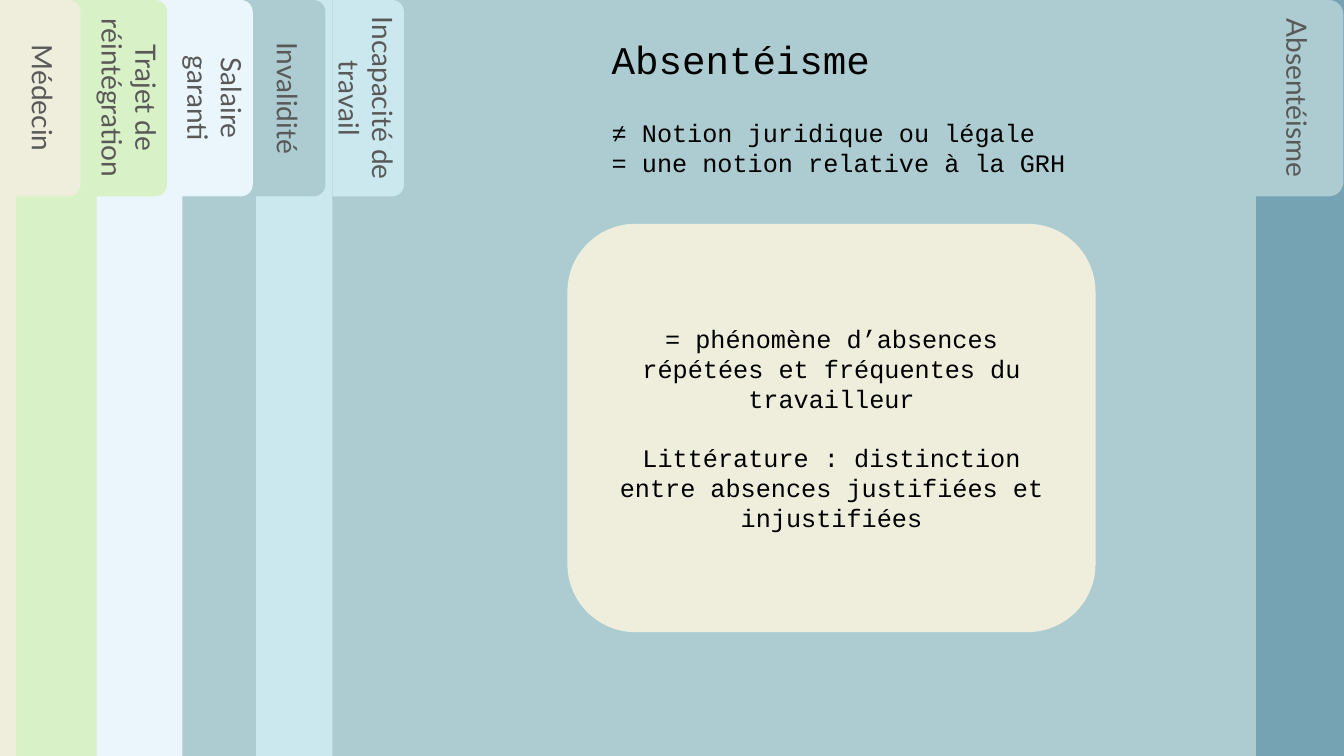
from pptx import Presentation
from pptx.dml.color import RGBColor
from pptx.enum.shapes import MSO_SHAPE
from pptx.enum.text import MSO_ANCHOR, MSO_AUTO_SIZE, PP_ALIGN
from pptx.oxml.ns import qn
from pptx.util import Cm, Pt

COLORS = {
    "background": "75A3B3",
    "teal": "ACCCD1",
    "aqua": "CCE8EF",
    "ice": "EAF6FC",
    "green": "D8F1C7",
    "cream": "EFEEDD",
    "grey": "595959",
    "black": "000000",
}
WIDTH, HEIGHT = 33.87, 19.05
TAB_LENGTH = 4.95
MONO, SANS = "Courier New", "Lato"

DIVIDERS = [
    ("Absentéisme", "teal", 31.65, 32.75, 2.21),
    ("Incapacité de travail", "aqua", 8.38, 9.28, 1.8),
    ("Invalidité", "teal", 6.45, 7.3, 1.8),
    ("Salaire garanti", "ice", 4.6, 5.47, 1.8),
    ("Trajet de réintégration", "green", 2.44, 3.31, 1.8),
    ("Médecin", "cream", 0.41, 1.13, 1.8),
]


def rgb(name):
    return RGBColor.from_string(COLORS[name])


def add_block(s, kind, left, top, width, height, color):
    sp = s.shapes.add_shape(kind, Cm(left), Cm(top), Cm(width), Cm(height))
    sp.shadow.inherit = False
    sp.fill.solid()
    sp.fill.fore_color.rgb = rgb(color)
    sp.line.fill.background()
    return sp


def write(sp, lines, font, size, color, align, anchor, gap=0):
    tf = sp.text_frame
    tf.word_wrap = True
    tf.auto_size = MSO_AUTO_SIZE.NONE
    tf.vertical_anchor = anchor
    for i, line in enumerate(lines):
        p = tf.add_paragraph() if i else tf.paragraphs[0]
        pPr = p._p.get_or_add_pPr()
        pPr.set("marL", "0")
        pPr.set("indent", "0")
        pPr.append(pPr.makeelement(qn("a:buNone"), {}))
        p.alignment = align
        p.space_before = Pt(gap if i else 0)
        r = p.add_run()
        r.text = line
        r.font.name = font
        r.font.size = Pt(size)
        r.font.color.rgb = rgb(color)


def add_divider(s, label, color, edge, tab_center, depth):
    add_block(s, MSO_SHAPE.RECTANGLE, 0, 0, edge, HEIGHT, color)
    tab = add_block(s, MSO_SHAPE.ROUND_2_SAME_RECTANGLE,
                    tab_center - TAB_LENGTH / 2, (TAB_LENGTH - depth) / 2,
                    TAB_LENGTH, depth, color)
    tab.rotation = 90
    write(tab, [label], SANS, 20, "grey", PP_ALIGN.CENTER, MSO_ANCHOR.MIDDLE)


def fill_placeholder(s, sp, left, top, width, height, lines, size):
    sp.left, sp.top, sp.width, sp.height = Cm(left), Cm(top), Cm(width), Cm(height)
    write(sp, lines, MONO, size, "black", PP_ALIGN.LEFT, MSO_ANCHOR.TOP)
    s.shapes._spTree.append(sp._element)


def add_card(s, lines):
    card = add_block(s, MSO_SHAPE.ROUNDED_RECTANGLE, 14.3, 5.64, 13.31, 10.29, "cream")
    write(card, lines, MONO, 18, "black", PP_ALIGN.CENTER, MSO_ANCHOR.MIDDLE, gap=20.4)


def main():
    prs = Presentation()
    prs.slide_width, prs.slide_height = Cm(WIDTH), Cm(HEIGHT)
    s = prs.slides.add_slide(prs.slide_layouts[1])
    s.background.fill.solid()
    s.background.fill.fore_color.rgb = rgb("background")
    for divider in DIVIDERS:
        add_divider(s, *divider)
    fill_placeholder(s, s.shapes.title, 15.16, 0.76, 7.37, 1.45, ["Absentéisme"], 28)
    fill_placeholder(s, s.placeholders[1], 15.16, 2.82, 15.42, 1.8, [
        "≠ Notion juridique ou légale",
        "= une notion relative à la GRH",
    ], 18)
    add_card(s, [
        "= phénomène d’absences répétées et fréquentes du travailleur",
        "Littérature : distinction entre absences justifiées et injustifiées",
    ])
    prs.save("out.pptx")


if __name__ == "__main__":
    main()
